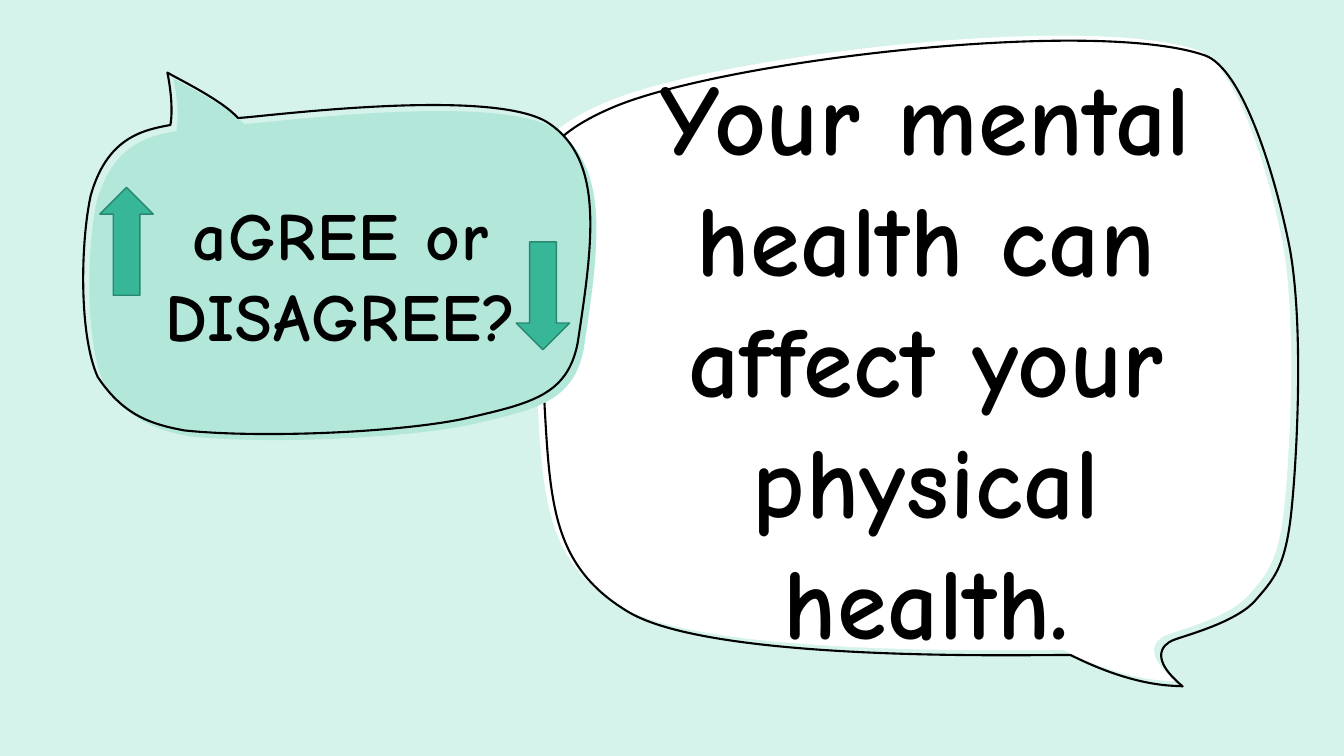
from math import cos, radians, sin

from lxml import etree
from pptx import Presentation
from pptx.dml.color import RGBColor
from pptx.enum.shapes import MSO_SHAPE
from pptx.enum.text import MSO_ANCHOR, MSO_AUTO_SIZE, PP_ALIGN
from pptx.oxml.ns import qn
from pptx.util import Inches, Pt

RECT, LEFT, RIGHT = MSO_SHAPE.RECTANGLE, MSO_SHAPE.LEFT_ARROW, MSO_SHAPE.RIGHT_ARROW
MIDDLE, CENTER = MSO_ANCHOR.MIDDLE, PP_ALIGN.CENTER
FIXED = MSO_AUTO_SIZE.NONE

SPEECH = [
    (11.57, 6.3),
    (11.7, 6.25), (12.17, 6.13), (12.37, 5.92),
    (12.56, 5.7), (12.68, 5.59), (12.74, 5.01),
    (12.8, 4.42), (12.86, 3.15), (12.72, 2.4),
    (12.57, 1.65), (12.25, 0.63), (11.88, 0.5),
    (10.79, 0.12), (7.09, 0.55), (6, 1.02),
    (4.9, 1.49), (5.2, 2.06), (5.29, 3.31),
    (5.4, 4.74), (5.28, 5.49), (6.16, 6.02),
    (7.03, 6.54), (10.32, 6.44), (10.55, 6.45),
    (11.21, 6.78), (11.59, 6.75), (11.66, 6.76),
    (11.24, 6.41), (11.57, 6.3), (11.57, 6.3),
]
PROMPT = [
    (1.72, 0.78),
    (1.8, 0.83), (2.26, 1.05), (2.42, 1.23),
    (2.58, 1.23), (4.94, 0.91), (5.5, 1.28),
    (6.06, 1.65), (5.94, 2.47), (5.79, 3.46),
    (5.69, 3.98), (5.33, 4.06), (4.68, 4.21),
    (4.03, 4.35), (2.65, 4.41), (1.89, 4.33),
    (1.57, 4.27), (1.29, 4.19), (1.03, 3.8),
    (0.84, 3.38), (0.86, 2.46), (0.96, 2),
    (1.12, 1.43), (1.47, 1.35), (1.75, 1.3),
    (1.75, 1.3), (1.79, 1.13), (1.72, 0.78),
]
SPEECH_BOX = (5.25, 0.41, 7.56, 6.46)
PROMPT_BOX = (0.85, 0.64, 5.09, 3.72)


def color(code):
    """Turn a hex string into a colour."""
    return RGBColor.from_string(code)


def level(knots, box, turn):
    """Undo a turn and measure the knots from the corner of the box."""
    left, top, width, height = box
    c, s = cos(radians(turn)), sin(radians(turn))
    points = []
    for x, y in knots:
        dx, dy = x - left - width / 2, y - top - height / 2
        points.append((Inches(width / 2 + dx * c + dy * s),
                       Inches(height / 2 - dx * s + dy * c)))
    return points


class Canvas:
    """Draw on one slide in a shared style."""

    font = "Comic Neue"
    ink = "000000"

    def __init__(self, slide, back):
        """Keep the slide and paint its background."""
        self.shapes = slide.shapes
        fill = slide.background.fill
        fill.solid()
        fill.fore_color.rgb = color(back)

    def paint(self, shape, fill=None, line=None, width=1):
        """Set the fill and line of a shape."""
        shape.shadow.inherit = False
        if fill:
            shape.fill.solid()
            shape.fill.fore_color.rgb = color(fill)
        else:
            shape.fill.background()
        if line:
            shape.line.color.rgb = color(line)
            shape.line.width = Pt(width)
        else:
            shape.line.fill.background()

    def bubble(self, knots, box, turn, shift=(0, 0), **style):
        """Draw a speech bubble from cubic curves."""
        points = level(knots, box, turn)
        pen = self.shapes.build_freeform(*points[0])
        pen.add_line_segments(points[1:], close=True)
        shape = pen.convert_to_shape()
        left, top, width, height = box
        shape.left, shape.top = Inches(left + shift[0]), Inches(top + shift[1])
        shape.width, shape.height = Inches(width), Inches(height)
        shape.rotation = turn
        self.curve(shape, points)
        self.paint(shape, **style)

    def curve(self, shape, points):
        """Replace straight segments with cubic ones."""
        track = next(shape._element.iter(qn("a:path")))
        for part in list(track):
            track.remove(part)
        track.set("w", str(shape.width))
        track.set("h", str(shape.height))
        groups = [("a:moveTo", points[:1])]
        groups += [("a:cubicBezTo", points[i:i + 3]) for i in range(1, len(points), 3)]
        for tag, group in groups:
            node = etree.SubElement(track, qn(tag))
            for x, y in group:
                etree.SubElement(node, qn("a:pt"), x=str(x), y=str(y))
        etree.SubElement(track, qn("a:close"))

    def block(self, kind, box, turn=0, **style):
        """Draw a preset shape."""
        shape = self.shapes.add_shape(kind, *map(Inches, box))
        shape.rotation = turn
        self.paint(shape, **style)

    def text(self, words, box, size, gap):
        """Write centred bold words with letter spacing."""
        frame = self.shapes.add_textbox(*map(Inches, box)).text_frame
        frame.word_wrap = True
        frame.auto_size = FIXED
        frame.vertical_anchor = MIDDLE
        para = frame.paragraphs[0]
        para.alignment = CENTER
        run = para.add_run()
        run.text = words
        run.font.name = self.font
        run.font.size = Pt(size)
        run.font.bold = True
        run.font.color.rgb = color(self.ink)
        run.font._element.set("spc", str(int(gap * 100)))


def main():
    """Build and save the slide."""
    deck = Presentation()
    deck.slide_width, deck.slide_height = Inches(13.33), Inches(7.5)
    mint, green, edge = "D5F2EB", "38B698", "298770"
    art = Canvas(deck.slides.add_slide(deck.slide_layouts[6]), mint)
    art.block(RECT, (0, 0, 13.33, 7.5), fill=mint)
    art.bubble(SPEECH, SPEECH_BOX, 357.5, fill="FFFFFF")
    art.bubble(SPEECH, SPEECH_BOX, 357.5, (0.07, 0.05), line=art.ink, width=1.5)
    art.bubble(PROMPT, PROMPT_BOX, 354.9, fill="B2E7DA")
    art.text("aGREE or DISAGREE?", (1.34, 1.58, 4.09, 2.28), 48, 1)
    art.bubble(PROMPT, PROMPT_BOX, 354.9, (-0.06, -0.06), line=art.ink, width=1.5)
    art.text("Your mental health can affect your physical health.",
             (6.4, 1.24, 5.58, 4.61), 72, 0.5)
    for kind, left, top in ((LEFT, 0.72, 2.13), (RIGHT, 4.85, 2.67)):
        art.block(kind, (left, top, 1.07, 0.53), 90, fill=green, line=edge)
    deck.save("out.pptx")


if __name__ == "__main__":
    main()
